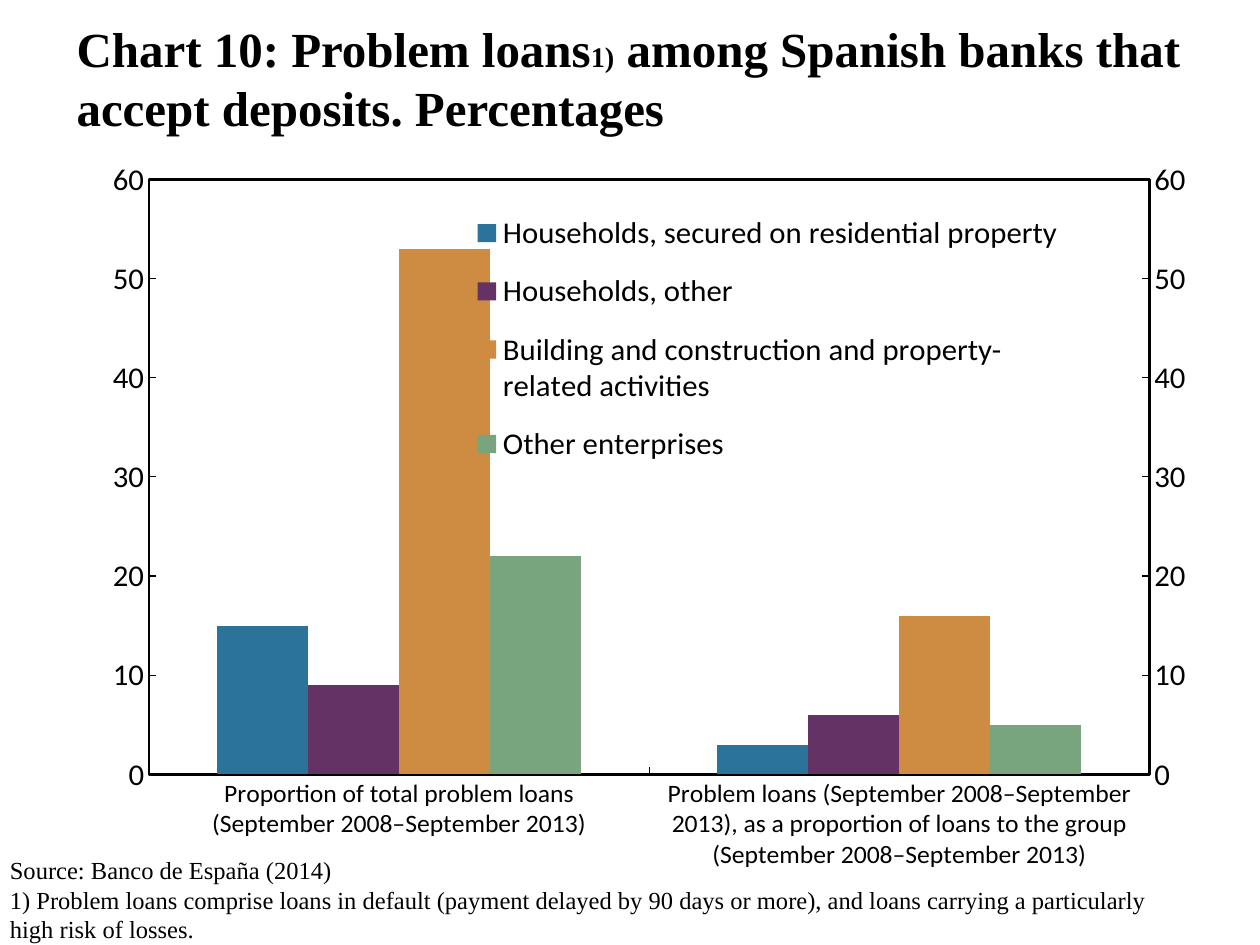
from copy import deepcopy

from pptx import Presentation
from pptx.chart.data import CategoryChartData as Data
from pptx.dml.color import RGBColor as RGB
from pptx.enum.chart import XL_CHART_TYPE as Kind, XL_LEGEND_POSITION as Side
from pptx.enum.chart import XL_TICK_MARK as Tick
from pptx.enum.text import MSO_ANCHOR as Anchor, MSO_AUTO_SIZE as Fit
from pptx.oxml import parse_xml
from pptx.oxml.ns import nsdecls, qn
from pptx.util import Inches, Pt

BLACK = "000000"
TITLE = [[("Chart 10: Problem loans", 0), ("1)", 30),
          (" among Spanish banks that accept deposits. Percentages", 0)]]
NOTES = [[("Source: Banco de España (2014)", 0)],
         [("1) Problem loans comprise loans in default (payment delayed by 90 days "
           "or more), and loans carrying a particularly high risk of losses.", 0)]]
GROUPS = ["Proportion of total problem loans (September 2008–September 2013)",
          "Problem loans (September 2008–September 2013), as a proportion of loans "
          "to the group (September 2008–September 2013)"]
LOANS = [("Households, secured on residential property", (15, 3), "2C7399"),
         ("Households, other", (9, 6), "643264"),
         ("Building and construction and property-related activities", (53, 16), "CD8C41"),
         ("Other enterprises", (22, 5), "78A57D")]


def color(code):
    """Turn a hex string into a colour."""
    return RGB.from_string(code)


def write(slide, box, paras, size=14, bold=False, anchor=Anchor.TOP, fit=Fit.NONE):
    """Add a text box of paragraphs made of (text, baseline) runs."""
    frame = slide.shapes.add_textbox(*map(Inches, box)).text_frame
    frame.word_wrap, frame.vertical_anchor, frame.auto_size = True, anchor, fit
    for i, runs in enumerate(paras):
        para = frame.add_paragraph() if i else frame.paragraphs[0]
        for text, lift in runs:
            run = para.add_run()
            run.text = text
            font = run.font
            font.name, font.size, font.bold = "Times New Roman", Pt(size), bold
            font.color.rgb = color(BLACK)
            if lift:
                run._r.get_or_add_rPr().set("baseline", f"{lift}%")


def node(tag, body="", val=None):
    """Make one chart element."""
    attr = "" if val is None else f' val="{val}"'
    return parse_xml(f'<c:{tag} {nsdecls("c")}{attr}>{body}</c:{tag}>')


def place(part, index, box, inner=False):
    """Give a chart part a manual layout in fractions of the chart."""
    for old in part.findall(qn("c:layout")):
        part.remove(old)
    body = '<c:layoutTarget val="inner"/>' if inner else ""
    body += '<c:xMode val="edge"/><c:yMode val="edge"/>'
    body += "".join(f'<c:{k} val="{v}"/>' for k, v in zip("xywh", box))
    part.insert(index, node("layout", f"<c:manualLayout>{body}</c:manualLayout>"))


def style(axis, size):
    """Format an axis with a thin line and inward ticks."""
    axis.has_major_gridlines = False
    axis.major_tick_mark, axis.minor_tick_mark = Tick.INSIDE, Tick.NONE
    axis.format.line.color.rgb = color(BLACK)
    axis.format.line.width = Pt(0.75)
    axis.tick_labels.font.size = Pt(size)


def twin(axis, own, other, **vals):
    """Copy an axis for the second pair, with new ids and values."""
    new = deepcopy(axis)
    for tag, val in dict(axId=own, crossAx=other, **vals).items():
        new.find(qn(f"c:{tag}")).set("val", str(val))
    return new


def mirror(plot):
    """Move the last series to a line plot on a right axis."""
    bars = plot.find(qn("c:barChart"))
    ser = bars.findall(qn("c:ser"))[-1]
    for old in ser.findall(qn("c:invertIfNegative")):
        ser.remove(old)
    ser.find(qn("c:spPr")).addnext(node("marker", '<c:symbol val="none"/>'))
    ser.append(node("smooth", val=0))
    line = node("lineChart", '<c:grouping val="standard"/><c:varyColors val="0"/>'
                '<c:marker val="1"/><c:axId val="501"/><c:axId val="502"/>')
    line.insert(2, ser)
    bars.addnext(line)
    cat, val = plot.find(qn("c:catAx")), plot.find(qn("c:valAx"))
    right = twin(val, 502, 501, axPos="r", crosses="max")
    val.addnext(right)
    right.addnext(twin(cat, 501, 502, delete=1))


def graph(slide, box):
    """Add the column chart with matching left and right axes."""
    data = Data()
    data.categories = GROUPS
    for name, vals, _ in LOANS:
        data.add_series(name, vals)
    data.add_series("Series 5", (2, 2))
    chart = slide.shapes.add_chart(Kind.COLUMN_CLUSTERED, *map(Inches, box), data).chart
    chart.has_title = False
    chart.font.name, chart.font.size = "Calibri", Pt(18)
    chart.font.color.rgb = color(BLACK)
    bars = chart.plots[0]
    bars.gap_width, bars.overlap, bars.vary_by_categories = 150, 0, False
    for ser, (_, _, code) in zip(bars.series, LOANS):
        ser.format.fill.solid()
        ser.format.fill.fore_color.rgb = color(code)
    bars.series[len(LOANS)].format.line.fill.background()
    style(chart.category_axis, 15)
    axis = chart.value_axis
    style(axis, 18)
    axis.minimum_scale, axis.maximum_scale, axis.major_unit = 0, 60, 10
    plot = bars._element.getparent()
    mirror(plot)
    place(plot, 0, (0.06, 0.05, 0.93, 0.86), inner=True)
    frame = node("spPr", f'<a:noFill {nsdecls("a")}/><a:ln {nsdecls("a")} w="{Pt(1.5)}">'
                 f'<a:solidFill><a:srgbClr val="{BLACK}"/></a:solidFill></a:ln>')
    plot.append(frame)
    chart.has_legend = True
    key = chart.legend
    key.position, key.include_in_layout = Side.RIGHT, False
    key.font.size = Pt(18)
    place(key._element, 1, (0.36, 0.07, 0.55, 0.42))
    key._element.insert(1, node("legendEntry", '<c:idx val="4"/><c:delete val="1"/>'))


def main():
    """Build and save the slide."""
    deck = Presentation()
    deck.slide_width, deck.slide_height = Inches(10), Inches(7.5)
    slide = deck.slides.add_slide(deck.slide_layouts[6])
    write(slide, (0.51, -0.01, 9, 1.25), TITLE, size=28, bold=True, anchor=Anchor.MIDDLE)
    graph(slide, (0.67, 1.15, 8.74, 5.75))
    write(slide, (-0.02, 6.74, 9.35, 0.81), NOTES, fit=Fit.SHAPE_TO_FIT_TEXT)
    deck.save("out.pptx")


if __name__ == "__main__":
    main()
